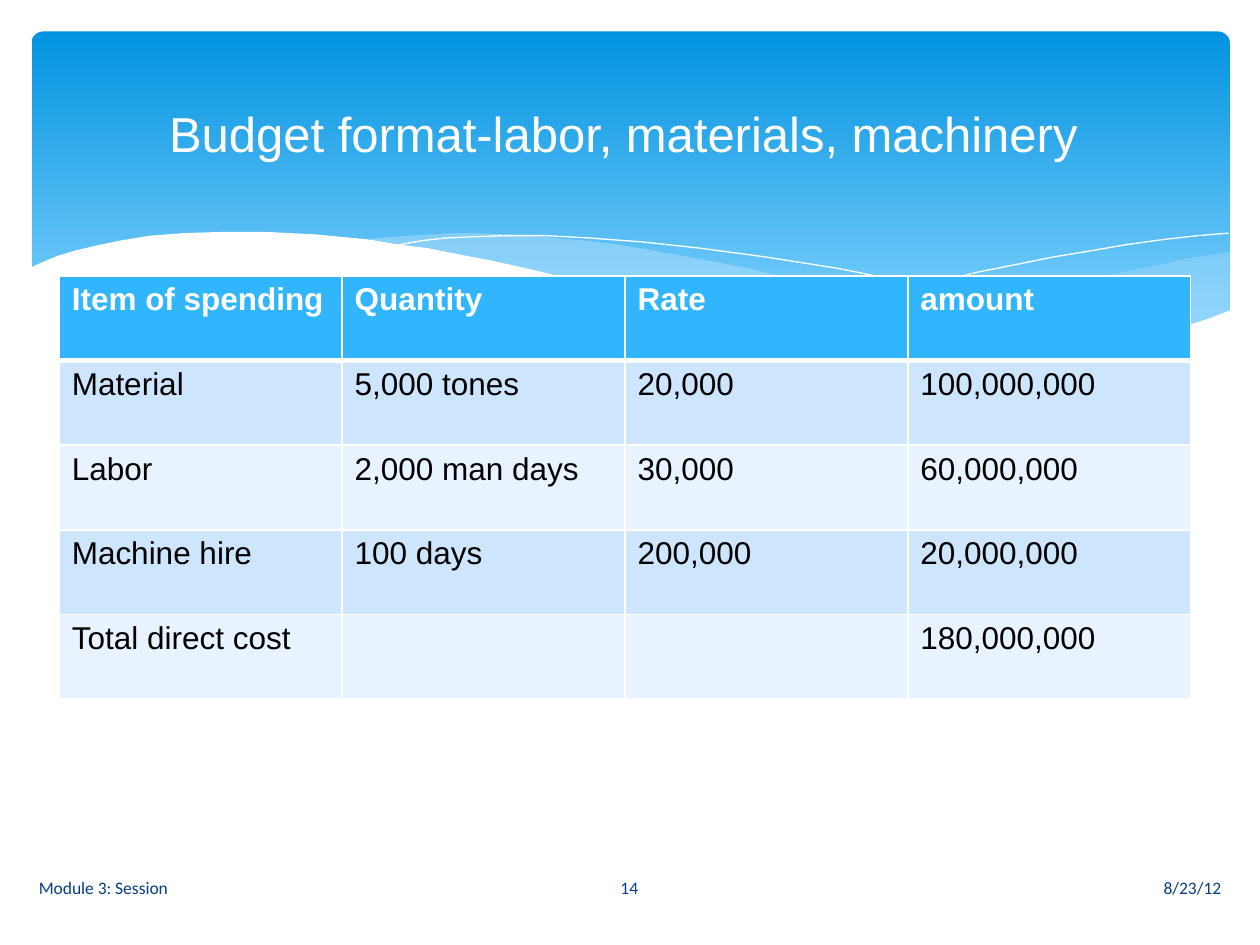
from lxml import etree
from pptx import Presentation
from pptx import util as u
from pptx.dml.color import RGBColor
from pptx.enum import shapes, text
from pptx.oxml import ns

WHITE = RGBColor(0xFF, 0xFF, 0xFF)
BLACK = RGBColor(0x00, 0x00, 0x00)
NAVY = RGBColor(0x07, 0x3E, 0x87)
DEEP_BLUE = RGBColor(0x02, 0x93, 0xE0)
SKY_BLUE = RGBColor(0x83, 0xD3, 0xFE)
PALE_BLUE = RGBColor(0xC6, 0xE7, 0xFC)
HEADER_BLUE = RGBColor(0x31, 0xB6, 0xFD)
BANDS = [RGBColor(0xCE, 0xE5, 0xFE), RGBColor(0xE8, 0xF3, 0xFF)]

RIGHT_WAVE = [
    (9.76, 2), (9.48, 2.04), (9.21, 2.1), (8.91, 2.16), (8.61, 2.23), (8.05, 2.37),
    (7.53, 2.48), (7.06, 2.57), (6.61, 2.65), (6.91, 2.69), (7.19, 2.72), (7.45, 2.75),
    (7.69, 2.77), (8.03, 2.78), (8.35, 2.77), (8.63, 2.75), (8.89, 2.72), (9.13, 2.67),
    (9.35, 2.62), (9.49, 2.57), (9.63, 2.52), (9.76, 2.47)]
MIDDLE_WAVE = [
    (8.93, 2.73), (8.66, 2.69), (8.37, 2.65), (8.07, 2.6), (7.75, 2.54), (7.41, 2.47),
    (7.06, 2.4), (6.68, 2.31), (6.29, 2.22), (5.98, 2.14), (5.69, 2.08), (5.41, 2.03),
    (5.14, 1.98), (4.89, 1.94), (4.65, 1.91), (4.42, 1.89), (4.2, 1.87), (3.99, 1.86),
    (3.8, 1.85), (3.61, 1.85), (3.28, 1.87), (2.99, 1.89), (2.86, 1.91), (3.23, 1.96),
    (3.62, 2.03), (4.04, 2.11), (4.49, 2.22), (4.91, 2.32), (5.3, 2.4), (5.66, 2.48),
    (6.01, 2.55), (6.34, 2.61), (6.65, 2.66), (6.95, 2.7), (7.22, 2.74), (7.48, 2.76),
    (7.73, 2.77), (7.96, 2.78), (8.38, 2.78), (8.67, 2.76)]
LONG_CREST = [
    (3.09, 1.95), (3.18, 1.94), (3.35, 1.91), (3.53, 1.89), (3.74, 1.88), (4.01, 1.87),
    (4.33, 1.87), (4.69, 1.89), (5.1, 1.92), (5.56, 1.97), (6.08, 2.04), (6.65, 2.13),
    (6.95, 2.19), (7.27, 2.26), (7.6, 2.33), (7.95, 2.41), (8.31, 2.51), (9.07, 2.72)]
SHORT_CREST = [
    (6.13, 2.57), (6.53, 2.46), (6.95, 2.35), (7.48, 2.23), (7.76, 2.16), (8.06, 2.1),
    (8.36, 2.04), (8.66, 1.99), (8.95, 1.94), (9.24, 1.9), (9.51, 1.87), (9.75, 1.85)]
WHITE_WAVE = [
    (9.77, 2.46), (9.59, 2.53), (9.4, 2.59), (9.2, 2.65), (8.99, 2.69), (8.75, 2.73),
    (8.5, 2.75), (8.23, 2.77), (7.93, 2.76), (7.61, 2.75), (7.26, 2.72), (6.88, 2.68),
    (6.48, 2.62), (6.03, 2.54), (5.55, 2.45), (5.03, 2.33), (4.47, 2.2), (4.18, 2.13),
    (3.91, 2.07), (3.65, 2.02), (3.4, 1.97), (3.16, 1.94), (2.92, 1.9), (2.71, 1.88),
    (2.5, 1.86), (2.3, 1.85), (2.11, 1.84), (1.77, 1.84), (1.46, 1.85), (1.19, 1.87),
    (0.95, 1.91), (0.76, 1.95), (0.59, 1.99), (0.46, 2.03), (0.36, 2.07), (0.23, 2.13),
    (0.23, 3.29), (9.77, 3.29)]

SPENDING = [
    ["Item of spending", "Quantity", "Rate", "amount"],
    ["Material", "5,000 tones", "20,000", "100,000,000"],
    ["Labor", "2,000 man days", "30,000", "60,000,000"],
    ["Machine hire", "100 days", "200,000", "20,000,000"],
    ["Total direct cost", "", "", "180,000,000"]]


def write(frame, words, size=18, font="Arial", color=BLACK, bold=False,
          align=text.PP_ALIGN.LEFT, anchor=text.MSO_ANCHOR.MIDDLE):
    frame.word_wrap = True
    frame.vertical_anchor = anchor
    paragraph = frame.paragraphs[0]
    paragraph.alignment = align
    run = paragraph.add_run()
    run.text = words
    run.font.size = u.Pt(size)
    run.font.name = font
    run.font.color.rgb = color
    run.font.bold = bold


def place(element, left, top, width, height):
    element.left, element.top = u.Inches(left), u.Inches(top)
    element.width, element.height = u.Inches(width), u.Inches(height)


def add_banner(slide):
    banner = slide.shapes.add_shape(
        shapes.MSO_SHAPE.ROUNDED_RECTANGLE,
        u.Inches(0.25), u.Inches(0.25), u.Inches(9.51), u.Inches(2.7))
    banner.adjustments[0] = 0.034
    banner.shadow.inherit = False
    banner.line.fill.background()
    banner.fill.gradient()
    banner.fill.gradient_angle = 270
    stops = zip(banner.fill.gradient_stops, (0, 0.9), (DEEP_BLUE, SKY_BLUE))
    for stop, position, color in stops:
        stop.position = position
        stop.color.rgb = color


def add_curve(slide, points, closed):
    corners = [(u.Inches(x), u.Inches(y)) for x, y in points]
    builder = slide.shapes.build_freeform(*corners[0])
    builder.add_line_segments(corners[1:], close=closed)
    curve = builder.convert_to_shape()
    curve.shadow.inherit = False
    return curve


def add_wave(slide, points, color, opacity=100):
    wave = add_curve(slide, points, True)
    wave.line.fill.background()
    wave.fill.solid()
    wave.fill.fore_color.rgb = color
    if opacity < 100:
        tint = wave.element.spPr.find(ns.qn("a:solidFill"))[0]
        etree.SubElement(tint, ns.qn("a:alpha"), val=str(opacity * 1000))


def add_crest(slide, points):
    crest = add_curve(slide, points, False)
    crest.fill.background()
    crest.line.color.rgb = WHITE
    crest.line.width = u.Pt(0)


def set_borders(cell, bottom):
    properties = cell._tc.get_or_add_tcPr()
    widths = {"a:lnL": 1, "a:lnR": 1, "a:lnT": 1, "a:lnB": bottom}
    for index, (side, width) in enumerate(widths.items()):
        border = etree.Element(ns.qn(side), w=str(u.Pt(width)))
        fill = etree.SubElement(border, ns.qn("a:solidFill"))
        etree.SubElement(fill, ns.qn("a:srgbClr"), val=str(WHITE))
        properties.insert(index, border)


def add_budget(slide):
    budget = slide.shapes.add_table(
        len(SPENDING), len(SPENDING[0]),
        u.Inches(0.47), u.Inches(2.19), u.Inches(8.98), u.Inches(3.36)).table
    for r, items in enumerate(SPENDING):
        header = r == 0
        for c, item in enumerate(items):
            cell = budget.cell(r, c)
            cell.fill.solid()
            cell.fill.fore_color.rgb = HEADER_BLUE if header else BANDS[(r - 1) % 2]
            set_borders(cell, 3 if header else 1)
            if item:
                write(cell.text_frame, item, color=WHITE if header else BLACK,
                      bold=header, anchor=text.MSO_ANCHOR.TOP)


def add_title(slide, words):
    title = slide.shapes.title
    place(title, 0.5, 0.37, 9, 1.37)
    write(title.text_frame, words, size=28, color=WHITE, align=text.PP_ALIGN.CENTER)
    slide.shapes.element.append(title.element)


def add_footer(slide, words, left, width, align):
    footer = slide.shapes.add_textbox(0, 0, 0, 0)
    place(footer, left, 6.84, width, 0.4)
    write(footer.text_frame, words, size=10, font="Calibri", color=NAVY, align=align)


def main():
    deck = Presentation()
    deck.slide_width, deck.slide_height = u.Inches(10), u.Inches(7.5)
    slide = deck.slides.add_slide(deck.slide_layouts[5])
    add_banner(slide)
    add_wave(slide, RIGHT_WAVE, PALE_BLUE, 29)
    add_wave(slide, MIDDLE_WAVE, PALE_BLUE, 40)
    add_crest(slide, LONG_CREST)
    add_crest(slide, SHORT_CREST)
    add_wave(slide, WHITE_WAVE, WHITE)
    add_budget(slide)
    add_title(slide, "Budget format-labor, materials, machinery ")
    add_footer(slide, "8/23/12", 5.65, 4.14, text.PP_ALIGN.RIGHT)
    add_footer(slide, "Module 3: Session", 0.21, 4.14, text.PP_ALIGN.LEFT)
    add_footer(slide, "14", 4.36, 1.27, text.PP_ALIGN.CENTER)
    deck.save("out.pptx")


if __name__ == "__main__":
    main()
